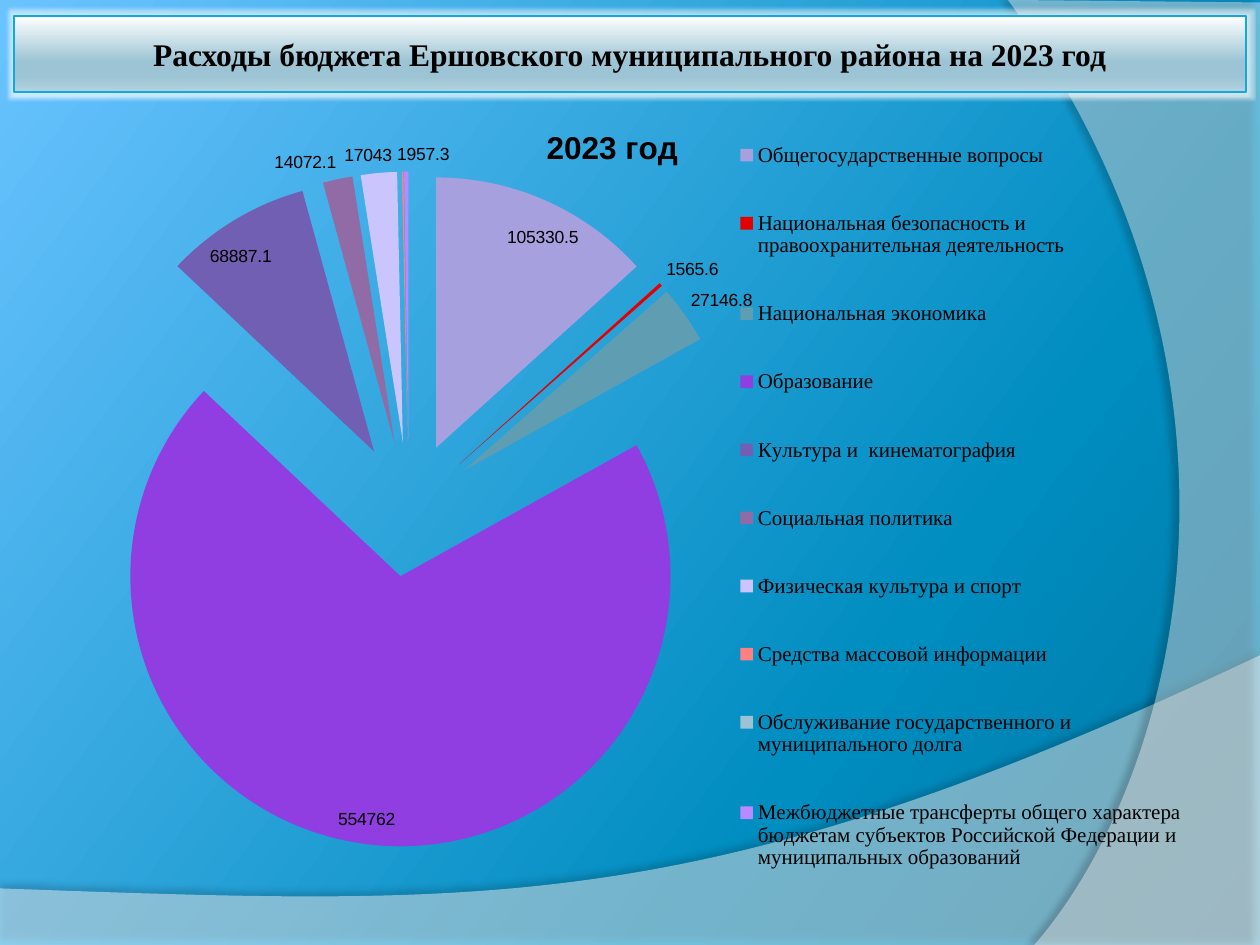
"""Build the slide on district budget spending in 2023."""
from lxml import etree
from pptx import Presentation
from pptx.chart.data import CategoryChartData
from pptx.dml.color import RGBColor
from pptx.enum.chart import XL_CHART_TYPE, XL_LABEL_POSITION, XL_LEGEND_POSITION
from pptx.enum.shapes import MSO_SHAPE
from pptx.enum.text import MSO_ANCHOR, PP_ALIGN
from pptx.oxml.ns import qn
from pptx.util import Cm, Pt

PIE = XL_CHART_TYPE.PIE
INSIDE = XL_LABEL_POSITION.INSIDE_END
OUTSIDE = XL_LABEL_POSITION.OUTSIDE_END
RIGHT = XL_LEGEND_POSITION.RIGHT
RECTANGLE = MSO_SHAPE.RECTANGLE
MIDDLE = MSO_ANCHOR.MIDDLE
CENTER = PP_ALIGN.CENTER

COLORS = {
    "text": "000000", "white": "FFFFFF", "border": "0FA8E0",
    "deep": "0076A1", "blue": "008DC0", "sky": "6AC3FF",
    "mist": "9CC4D4", "haze": "B4D3DF",
}
SPENDING = [
    ("Общегосударственные вопросы", 105330.5, "A6A0DE", INSIDE),
    ("Национальная безопасность и правоохранительная деятельность", 1565.6, "E40000", OUTSIDE),
    ("Национальная экономика", 27146.8, "5F9DB2", OUTSIDE),
    ("Образование", 554762, "903EE2", INSIDE),
    ("Культура и  кинематография", 68887.1, "705FB2", INSIDE),
    ("Социальная политика", 14072.1, "916BA6", OUTSIDE),
    ("Физическая культура и спорт", 17043, "CAC5FC", OUTSIDE),
    ("Средства массовой информации", 726.5, "FF8080", None),
    ("Обслуживание государственного и муниципального долга", 0, "9CC3D4", None),
    ("Межбюджетные трансферты общего характера бюджетам субъектов "
     "Российской Федерации и муниципальных образований", 1957.3, "B98AFF", OUTSIDE),
]


def write_text(frame, text, font="Arial", size=18, bold=True, color="text"):
    para = frame.paragraphs[0]
    para.alignment = CENTER
    span = para.add_run()
    span.text = text
    span.font.name = font
    span.font.size = Pt(size)
    span.font.bold = bold
    span.font.color.rgb = RGBColor.from_string(COLORS[color])


def paint_gradient(fill, owner, angle, stops):
    fill.gradient()
    fill.gradient_angle = angle
    stop_list = next(owner.iter(qn("a:gsLst")))
    for old in list(stop_list):
        stop_list.remove(old)
    for position, name in stops:
        stop = etree.SubElement(stop_list, qn("a:gs"), pos=str(position * 1000))
        etree.SubElement(stop, qn("a:srgbClr"), val=COLORS[name])


deck = Presentation()
deck.slide_width, deck.slide_height = Cm(25.4), Cm(19.05)
page = deck.slides.add_slide(deck.slide_layouts[6])
paint_gradient(page.background.fill, page.element, 143,
               [(0, "deep"), (30, "blue"), (100, "sky")])

BANDS = [
    ([(0, 17.91), (0, 19.05), (25.4, 19.05), (25.4, 13.21)],
     [(14.2, 18.52), (9.93, 18.26), (0, 17.91)], 45, 35, 3.5, 270),
    ([(25.4, 0.05), (25.4, 19.05), (20.85, 19.05)],
     [(23.75, 15.72), (25.86, 7.62), (20.32, 0)], 40, 45, 4, 180),
]
for corners, curve, opacity, shade, distance, direction in BANDS:
    outline = [(Cm(x), Cm(y)) for x, y in corners + curve[-1:]]
    builder = page.shapes.build_freeform(*outline[0])
    builder.add_line_segments(outline[1:], close=True)
    band = builder.convert_to_shape()
    bend = etree.Element(qn("a:cubicBezTo"))
    for x, y in curve:
        etree.SubElement(bend, qn("a:pt"), x=str(Cm(x) - band.left), y=str(Cm(y) - band.top))
    edge = list(band.element.iter(qn("a:lnTo")))[len(corners) - 1]
    edge.getparent().replace(edge, bend)
    band.fill.solid()
    band.fill.fore_color.rgb = RGBColor.from_string(COLORS["white"])
    band.line.fill.background()
    band.shadow.inherit = False
    color = next(band.element.spPr.iter(qn("a:srgbClr")))
    etree.SubElement(color, qn("a:alpha"), val=str(opacity * 1000))
    shadow = etree.SubElement(
        band.element.spPr.find(qn("a:effectLst")), qn("a:outerShdw"),
        blurRad=str(Pt(4)), dist=str(Pt(distance)), dir=str(direction * 60000))
    color = etree.SubElement(shadow, qn("a:srgbClr"), val=COLORS["text"])
    etree.SubElement(color, qn("a:alpha"), val=str(shade * 1000))

banner = page.shapes.add_shape(RECTANGLE, Cm(0.28), Cm(0.32), Cm(24.84), Cm(1.54))
banner.shadow.inherit = False
paint_gradient(banner.fill, banner.element, 270,
               [(0, "white"), (60, "mist"), (80, "mist"), (100, "haze")])
banner.line.color.rgb = RGBColor.from_string(COLORS["border"])
banner.line.width = Pt(1)
glow = etree.SubElement(banner.element.spPr.find(qn("a:effectLst")),
                        qn("a:glow"), rad=str(Pt(2.5)))
color = etree.SubElement(glow, qn("a:srgbClr"), val=COLORS["white"])
etree.SubElement(color, qn("a:alpha"), val="45000")
banner.text_frame.word_wrap = True
banner.text_frame.vertical_anchor = MIDDLE
write_text(banner.text_frame, "Расходы бюджета Ершовского муниципального района на 2023 год",
           font="Times New Roman")

data = CategoryChartData()
data.categories = [row[0] for row in SPENDING]
data.add_series("2023 год", [row[1] for row in SPENDING])
chart = page.shapes.add_chart(PIE, Cm(0.99), Cm(1.98), Cm(23.06), Cm(16.46), data).chart
chart.font.name = "Arial"
chart.font.size = Pt(10)
chart.font.color.rgb = RGBColor.from_string(COLORS["text"])
chart.has_title = True
write_text(chart.chart_title.text_frame, "2023 год")
chart.has_legend = True
chart.legend.position = RIGHT
chart.legend.include_in_layout = False
chart.legend.font.name = "Times New Roman"
chart.legend.font.size = Pt(12)

series = chart.plots[0].series[0]
series.data_labels.show_value = False
for index, (_, _, shade, position) in enumerate(SPENDING):
    point = series.points[index]
    point.format.fill.solid()
    point.format.fill.fore_color.rgb = RGBColor.from_string(shade)
    point.format.line.fill.background()
    if position is not None:
        point.data_label.position = position
explosion = etree.Element(qn("c:explosion"), val="25")
series._element.find(qn("c:tx")).addnext(explosion)

labels = {label.find(qn("c:idx")).get("val"): label
          for label in series._element.iter(qn("c:dLbl"))}
LAYOUTS = [
    (next(chart.element.iter(qn("c:plotArea"))), None, {"x": 1.5, "y": 9, "w": 59.9, "h": 82.7}),
    (next(chart.element.iter(qn("c:title"))), "c:tx", {"x": 43, "y": 2.8}),
    (next(chart.element.iter(qn("c:legend"))), "c:legendPos",
     {"x": 59.7, "y": 0, "w": 40, "h": 100}),
    (labels["0"], "c:idx", {"x": 3.1, "y": 2.5}),
    (labels["3"], "c:idx", {"x": -2.6, "y": -0.9}),
    (labels["4"], "c:idx", {"x": -2.5, "y": 2.5}),
    (labels["6"], "c:idx", {"x": 1.2, "y": 0}),
    (labels["9"], "c:idx", {"x": 1.5, "y": 0}),
]
for part, anchor, places in LAYOUTS:
    for old in part.findall(qn("c:layout")):
        part.remove(old)
    layout = etree.Element(qn("c:layout"))
    manual = etree.SubElement(layout, qn("c:manualLayout"))
    if anchor is None:
        etree.SubElement(manual, qn("c:layoutTarget"), val="inner")
    if anchor != "c:idx":
        for key in ("x", "y"):
            etree.SubElement(manual, qn(f"c:{key}Mode"), val="edge")
    for key, percent in places.items():
        etree.SubElement(manual, qn(f"c:{key}"), val=str(percent / 100))
    if anchor:
        part.find(qn(anchor)).addnext(layout)
    else:
        part.insert(0, layout)

deck.save("out.pptx")
